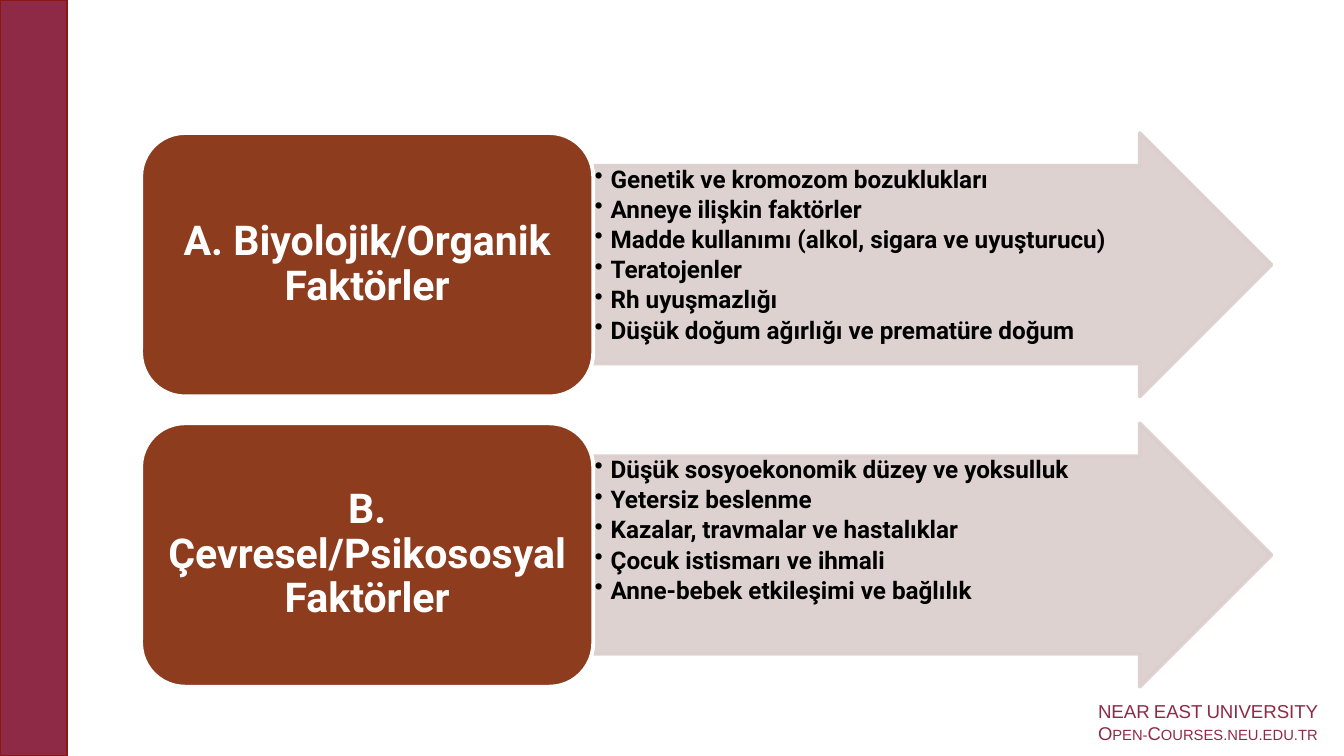
from dataclasses import dataclass

from lxml.etree import SubElement
from pptx import Presentation
from pptx.dml.color import RGBColor
from pptx.enum.shapes import MSO_SHAPE as Preset
from pptx.enum.text import MSO_ANCHOR as Anchor, PP_ALIGN as Align
from pptx.oxml.ns import qn
from pptx.util import Inches, Pt

SLIDE_W = 10
SLIDE_H = SLIDE_W * 9 / 16
DIAGRAM_LEFT, DIAGRAM_TOP, DIAGRAM_W = 1.05, 0.99, 8.41
TITLE_SHARE = 0.4
ROW_H, ROW_PITCH = 1.96, 2.16

MAROON, DARK_RED, BROWN, ROSE = "8F2A46", "8C1515", "8D3C1E", "DBCECD"
WHITE, BLACK = "FFFFFF", "000000"

TITLE_FONT = {"name": "Roboto", "size": Pt(22), "bold": True}
FACTOR_FONT = {"name": "Roboto", "size": Pt(13), "bold": True}


@dataclass
class Box:
    left: float
    top: float
    width: float
    height: float

    def lengths(self) -> list:
        return [Inches(n) for n in (self.left, self.top, self.width, self.height)]


@dataclass
class FactorGroup:
    title: str
    factors: list[str]


GROUPS = [
    FactorGroup("A. Biyolojik/Organik Faktörler", [
        "Genetik ve kromozom bozuklukları",
        "Anneye ilişkin faktörler",
        "Madde kullanımı (alkol, sigara ve uyuşturucu)",
        "Teratojenler",
        "Rh uyuşmazlığı",
        "Düşük doğum ağırlığı ve prematüre doğum",
    ]),
    FactorGroup("B. Çevresel/Psikososyal Faktörler", [
        "Düşük sosyoekonomik düzey ve yoksulluk",
        "Yetersiz beslenme",
        "Kazalar, travmalar ve hastalıklar",
        "Çocuk istismarı ve ihmali",
        "Anne-bebek etkileşimi ve bağlılık",
    ]),
]


def apply(target, values: dict) -> None:
    for name, value in values.items():
        setattr(target, name, value)


def paint(fill, color: str, alpha: int = 100) -> None:
    """Make a fill solid; alpha is its opacity in percent."""
    fill.solid()
    fill.fore_color.rgb = RGBColor.from_string(color)
    if alpha < 100:
        for srgb in fill._xPr.iter(qn("a:srgbClr")):
            SubElement(srgb, qn("a:alpha"), val=str(alpha * 1000))


def add_text(paragraph, text: str, font: dict, color: str):
    run = paragraph.add_run()
    run.text = text
    apply(run.font, font)
    paint(run.font.fill, color)
    return run


def set_frame(frame, anchor, left: float, top: float, right: float, wrap=True) -> None:
    apply(frame, {
        "word_wrap": wrap, "vertical_anchor": anchor,
        "margin_left": Inches(left), "margin_right": Inches(right),
        "margin_top": Inches(top), "margin_bottom": Inches(top),
    })


def add_preset(slide, preset, box: Box, fill: str, line: str, weight: float, alpha=100):
    shape = slide.shapes.add_shape(preset, *box.lengths())
    shape.shadow.inherit = False
    paint(shape.fill, fill, alpha)
    paint(shape.line.fill, line, alpha)
    shape.line.width = Pt(weight)
    return shape


def add_bullet(paragraph) -> None:
    props = paragraph._p.get_or_add_pPr()
    indent = Inches(0.12)
    props.set("marL", str(indent))
    props.set("indent", str(-indent))
    SubElement(props, qn("a:buChar"), char="•")


def add_arrow(slide, box: Box, factors: list[str]) -> None:
    arrow = add_preset(slide, Preset.RIGHT_ARROW, box, ROSE, ROSE, 2.08, alpha=90)
    arrow.adjustments[0], arrow.adjustments[1] = 0.75, 0.5
    frame = arrow.text_frame
    set_frame(frame, Anchor.TOP, 0.01, 0.01, 0.48)
    for i, factor in enumerate(factors):
        line = frame.add_paragraph() if i else frame.paragraphs[0]
        apply(line, {"alignment": Align.LEFT, "line_spacing": 0.9, "space_after": Pt(2.1)})
        add_bullet(line)
        add_text(line, factor, FACTOR_FONT, BLACK)


def add_title(slide, box: Box, title: str) -> None:
    panel = add_preset(slide, Preset.ROUNDED_RECTANGLE, box, BROWN, WHITE, 2.08)
    set_frame(panel.text_frame, Anchor.MIDDLE, 0.09, 0.05, 0.09)
    heading = panel.text_frame.paragraphs[0]
    apply(heading, {"alignment": Align.CENTER, "line_spacing": 0.9})
    add_text(heading, title, TITLE_FONT, WHITE)


def add_signature(slide) -> None:
    signature = slide.shapes.add_textbox(*Box(8.17, 5.16, 1.69, 0.4).lengths())
    frame = signature.text_frame
    set_frame(frame, Anchor.TOP, 0, 0.05, 0, wrap=False)
    lines = [("NEAR EAST UNIVERSITY", 10), ("Open-Courses.neu.edu.tr", 9.9)]
    for i, (text, size) in enumerate(lines):
        line = frame.add_paragraph() if i else frame.paragraphs[0]
        line.alignment = Align.LEFT
        run = add_text(line, text, {"name": "Arial", "size": Pt(size)}, MAROON)
        run._r.get_or_add_rPr().set("cap", "small")


def main() -> None:
    deck = Presentation()
    apply(deck, {"slide_width": Inches(SLIDE_W), "slide_height": Inches(SLIDE_H)})
    slide = deck.slides.add_slide(deck.slide_layouts[6])

    side_band = Box(0, 0, SLIDE_W * 0.05, SLIDE_H)
    add_preset(slide, Preset.RECTANGLE, side_band, MAROON, DARK_RED, 0.75)
    add_signature(slide)

    title_w = DIAGRAM_W * TITLE_SHARE
    for row, group in enumerate(GROUPS):
        top = DIAGRAM_TOP + row * ROW_PITCH
        arrow_box = Box(DIAGRAM_LEFT + title_w, top, DIAGRAM_W - title_w, ROW_H)
        add_arrow(slide, arrow_box, group.factors)
        add_title(slide, Box(DIAGRAM_LEFT, top, title_w, ROW_H), group.title)

    deck.save("out.pptx")


if __name__ == "__main__":
    main()
